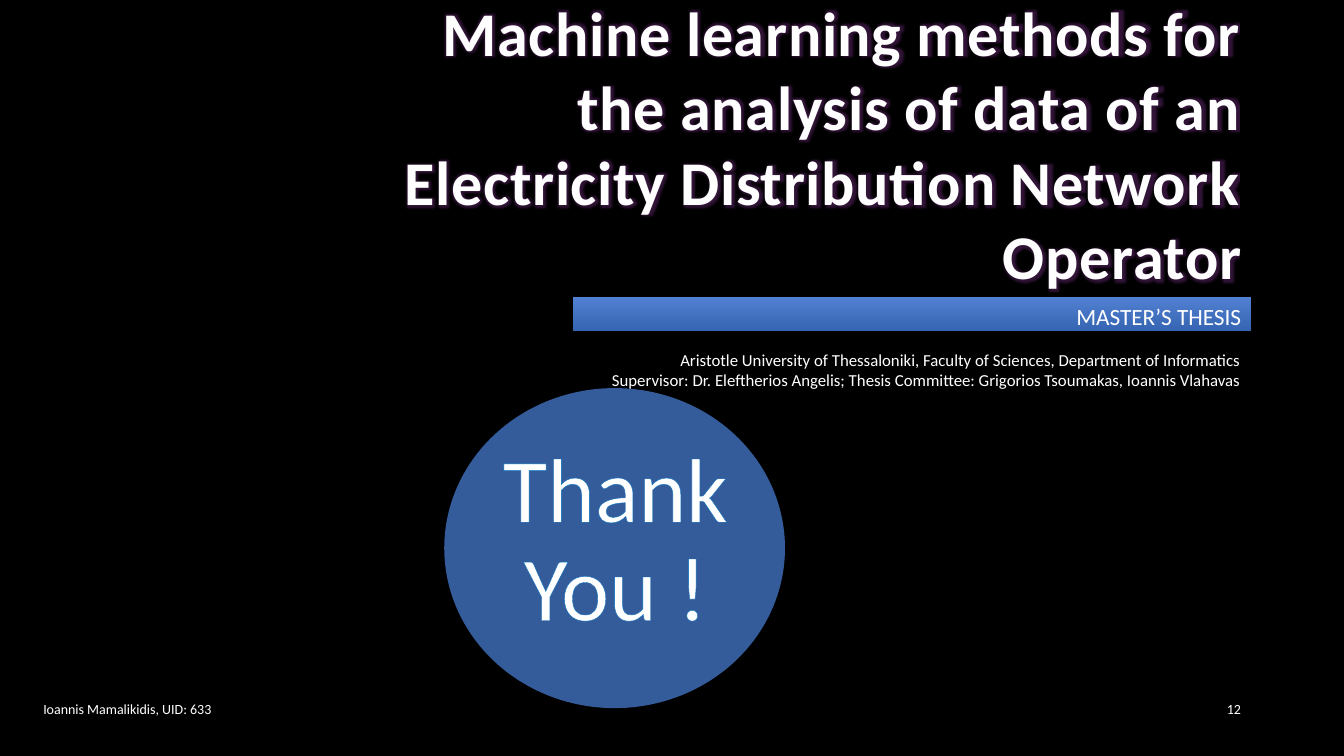
from lxml.etree import SubElement
from pptx import Presentation
from pptx.dml.color import RGBColor
from pptx.enum.shapes import MSO_SHAPE
from pptx.enum.text import MSO_ANCHOR, MSO_AUTO_SIZE, PP_ALIGN
from pptx.oxml import parse_xml
from pptx.oxml.ns import qn
from pptx.util import Pt

BLACK = RGBColor(0x00, 0x00, 0x00)
WHITE = RGBColor(0xFF, 0xFF, 0xFF)
TITLE_WHITE = RGBColor(0xFE, 0xFE, 0xFE)
TITLE_OUTLINE = RGBColor(0x47, 0x7B, 0xD1)
TITLE_GLOW = RGBColor(0x7A, 0x30, 0x88)
BAR_TOP = RGBColor(0x51, 0x80, 0xD2)
BAR_BOTTOM = RGBColor(0x36, 0x65, 0xB3)
CIRCLE_BLUE = RGBColor(0x35, 0x5C, 0x9A)
THANKS_OUTLINE = RGBColor(0x00, 0x70, 0xC0)

FONT = "Calibri"
A_NS = "http://schemas.openxmlformats.org/drawingml/2006/main"


def place(shape, left, top, width, height):
    shape.left, shape.top = Pt(left), Pt(top)
    shape.width, shape.height = Pt(width), Pt(height)


def outline_text(run, color, width):
    run.font._element.insert(0, parse_xml(
        f'<a:ln xmlns:a="{A_NS}" w="{Pt(width)}"><a:solidFill>'
        f'<a:srgbClr val="{color}"/></a:solidFill></a:ln>'))


def glow_text(run, color, radius):
    fill = run.font._element.find(qn("a:solidFill"))
    fill.addnext(parse_xml(
        f'<a:effectLst xmlns:a="{A_NS}"><a:glow rad="{Pt(radius)}">'
        f'<a:srgbClr val="{color}"><a:alpha val="40000"/></a:srgbClr>'
        f'</a:glow></a:effectLst>'))


def write(shape, *lines, size, color=WHITE, align=PP_ALIGN.RIGHT,
          anchor=MSO_ANCHOR.TOP, bold=False, line_spacing=1.0, inset=None):
    """Fill the shape with one paragraph per line and return the runs."""
    frame = shape.text_frame
    frame.word_wrap = True
    frame.auto_size = MSO_AUTO_SIZE.NONE
    frame.vertical_anchor = anchor
    if inset is not None:
        frame.margin_left = frame.margin_right = Pt(inset)
        frame.margin_top = frame.margin_bottom = Pt(inset)
    frame.text = "\n".join(lines)
    runs = []
    for paragraph in frame.paragraphs:
        paragraph.alignment = align
        paragraph.line_spacing = line_spacing
        paragraph.space_before = Pt(0)
        run = paragraph.runs[0]
        run.font.name, run.font.size = FONT, Pt(size)
        run.font.bold = bold
        run.font.color.rgb = color
        runs.append(run)
    return runs


def add_text(slide, box, *lines, **text_format):
    textbox = slide.shapes.add_textbox(*map(Pt, box))
    return write(textbox, *lines, **text_format)


def add_title(slide, text):
    title = slide.shapes.title
    place(title, 261.4, 21.6, 632.9, 190.8)
    run, = write(title, text, size=44.4, color=TITLE_WHITE, bold=True,
                 anchor=MSO_ANCHOR.BOTTOM)
    run.font._element.set("spc", "50")
    outline_text(run, TITLE_OUTLINE, 1)
    glow_text(run, TITLE_GLOW, 5)


def add_subtitle_bar(slide, text):
    bar = slide.placeholders[1]
    place(bar, 409, 212.4, 484.6, 23.8)
    bar.fill.gradient()
    bar.fill.gradient_angle = 270
    for stop, color in zip(bar.fill.gradient_stops, (BAR_TOP, BAR_BOTTOM)):
        stop.color.rgb = color
    for stop, position in zip(bar.fill.gradient_stops, (0, 1)):
        stop.position = position
    write(bar, text, size=16.6)


def add_thanks_circle(slide, text):
    circle = slide.shapes.add_shape(
        MSO_SHAPE.OVAL, Pt(317.3), Pt(277.2), Pt(243.4), Pt(228.6))
    circle.shadow.inherit = False
    circle.fill.solid()
    circle.fill.fore_color.rgb = CIRCLE_BLUE
    circle.line.fill.background()
    run, = add_text(slide, (353.5, 301, 172.1, 172.1), text, size=65,
                    align=PP_ALIGN.CENTER, anchor=MSO_ANCHOR.MIDDLE,
                    line_spacing=0.9, inset=0)
    outline_text(run, THANKS_OUTLINE, 0.75)


def main():
    presentation = Presentation()
    presentation.slide_width, presentation.slide_height = Pt(960), Pt(540)
    slide = presentation.slides.add_slide(presentation.slide_layouts[0])
    slide.background.fill.solid()
    slide.background.fill.fore_color.rgb = BLACK

    add_title(slide, "Machine learning methods for the analysis of data of an "
                     "Electricity Distribution Network Operator")
    add_subtitle_bar(slide, "MASTER’S THESIS")
    add_text(slide, (350.6, 246.2, 542.9, 36),
             "Aristotle University of Thessaloniki, Faculty of Sciences, "
             "Department of Informatics",
             "Supervisor: Dr. Eleftherios Angelis; Thesis Committee: "
             "Grigorios Tsoumakas, Ioannis Vlahavas", size=12)
    add_text(slide, (23.8, 491.8, 385.2, 29.5), "Ioannis Mamalikidis, UID: 633",
             size=10, align=PP_ALIGN.LEFT, anchor=MSO_ANCHOR.MIDDLE)
    add_text(slide, (835.9, 491.8, 57.6, 29.5), "12", size=10,
             anchor=MSO_ANCHOR.MIDDLE)
    add_thanks_circle(slide, "Thank You !")
    presentation.save("out.pptx")


if __name__ == "__main__":
    main()
